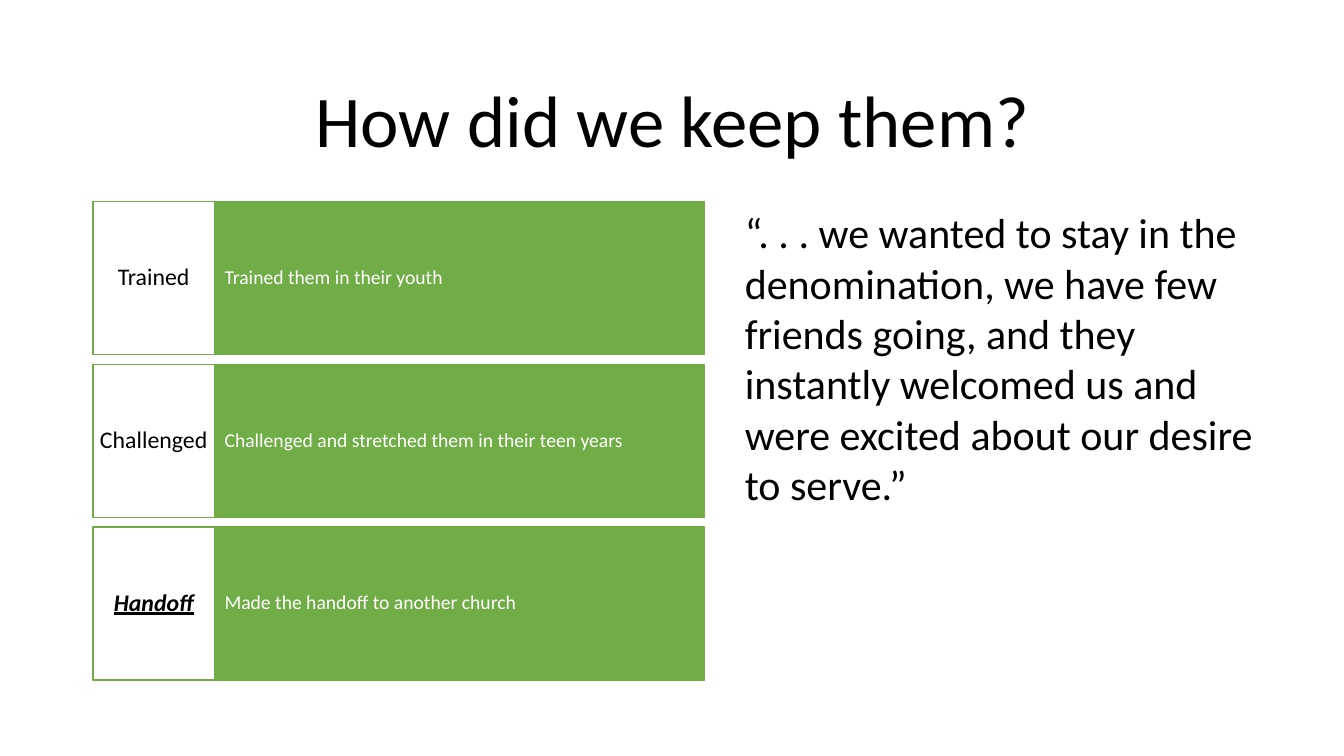
from dataclasses import dataclass

from pptx import Presentation
from pptx import util as u
from pptx.dml.color import RGBColor
from pptx.enum import shapes, text

GREEN = RGBColor(0x70, 0xAD, 0x47)
WHITE = RGBColor(0xFF, 0xFF, 0xFF)
BLACK = RGBColor(0x00, 0x00, 0x00)
FONT = "Calibri"

# Layout in centimetres
LEFT, ROWS_TOP = 2.34, 5.08
ROW_HEIGHT, ROW_PITCH = 3.86, 4.1
LABEL_WIDTH, DETAIL_WIDTH = 3.07, 12.34


@dataclass
class Step:
    label: str
    detail: str
    emphasized: bool = False


STEPS = [
    Step("Trained", "Trained them in their youth"),
    Step("Challenged", "Challenged and stretched them in their teen years"),
    Step("Handoff", "Made the handoff to another church", emphasized=True),
]


def write(shape, wording: str, *, size: float, color: RGBColor = BLACK,
          align=text.PP_ALIGN.LEFT, anchor=text.MSO_ANCHOR.MIDDLE,
          spacing: float = 0.9, inset_x: float = 0.25, inset_y: float = 0.13,
          emphasized: bool = False) -> None:
    frame = shape.text_frame
    frame.word_wrap = True
    frame.vertical_anchor = anchor
    frame.margin_left = frame.margin_right = u.Cm(inset_x)
    frame.margin_top = frame.margin_bottom = u.Cm(inset_y)
    paragraph = frame.paragraphs[0]
    paragraph.alignment = align
    paragraph.line_spacing = spacing
    run = paragraph.add_run()
    run.text = wording
    font = run.font
    font.name, font.size, font.color.rgb = FONT, u.Pt(size), color
    font.bold = font.italic = font.underline = emphasized


def add_box(slide, left: float, top: float, width: float, fill: RGBColor):
    box = slide.shapes.add_shape(
        shapes.MSO_SHAPE.RECTANGLE,
        u.Cm(left), u.Cm(top), u.Cm(width), u.Cm(ROW_HEIGHT))
    box.shadow.inherit = False
    box.fill.solid()
    box.fill.fore_color.rgb = fill
    box.line.color.rgb = GREEN
    box.line.width = u.Pt(1)
    return box


def add_step(slide, step: Step, top: float) -> None:
    detail = add_box(slide, LEFT + LABEL_WIDTH, top, DETAIL_WIDTH, GREEN)
    write(detail, step.detail, size=14, color=WHITE, inset_y=1)
    label = add_box(slide, LEFT, top, LABEL_WIDTH, WHITE)
    write(label, step.label, size=17, align=text.PP_ALIGN.CENTER,
          inset_x=0.15, inset_y=0.38, emphasized=step.emphasized)


def main() -> None:
    prs = Presentation()
    prs.slide_width, prs.slide_height = u.Cm(33.87), u.Cm(19.05)
    slide = prs.slides.add_slide(prs.slide_layouts[6])

    # Title
    title = slide.shapes.add_textbox(
        u.Cm(LEFT), u.Cm(1.55), u.Cm(29.21), u.Cm(3.15))
    write(title, "How did we keep them?", size=52,
          align=text.PP_ALIGN.CENTER)

    # Steps
    for row, step in enumerate(STEPS):
        add_step(slide, step, ROWS_TOP + row * ROW_PITCH)

    # Quote
    quote = slide.shapes.add_textbox(
        u.Cm(18.52), u.Cm(ROWS_TOP), u.Cm(13.69), u.Cm(7.95))
    write(quote, "“. . . we wanted to stay in the denomination, we have few "
          "friends going, and they instantly welcomed us and were excited "
          "about our desire to serve.”", size=30,
          anchor=text.MSO_ANCHOR.TOP, spacing=1.0)

    prs.save("out.pptx")


if __name__ == "__main__":
    main()
